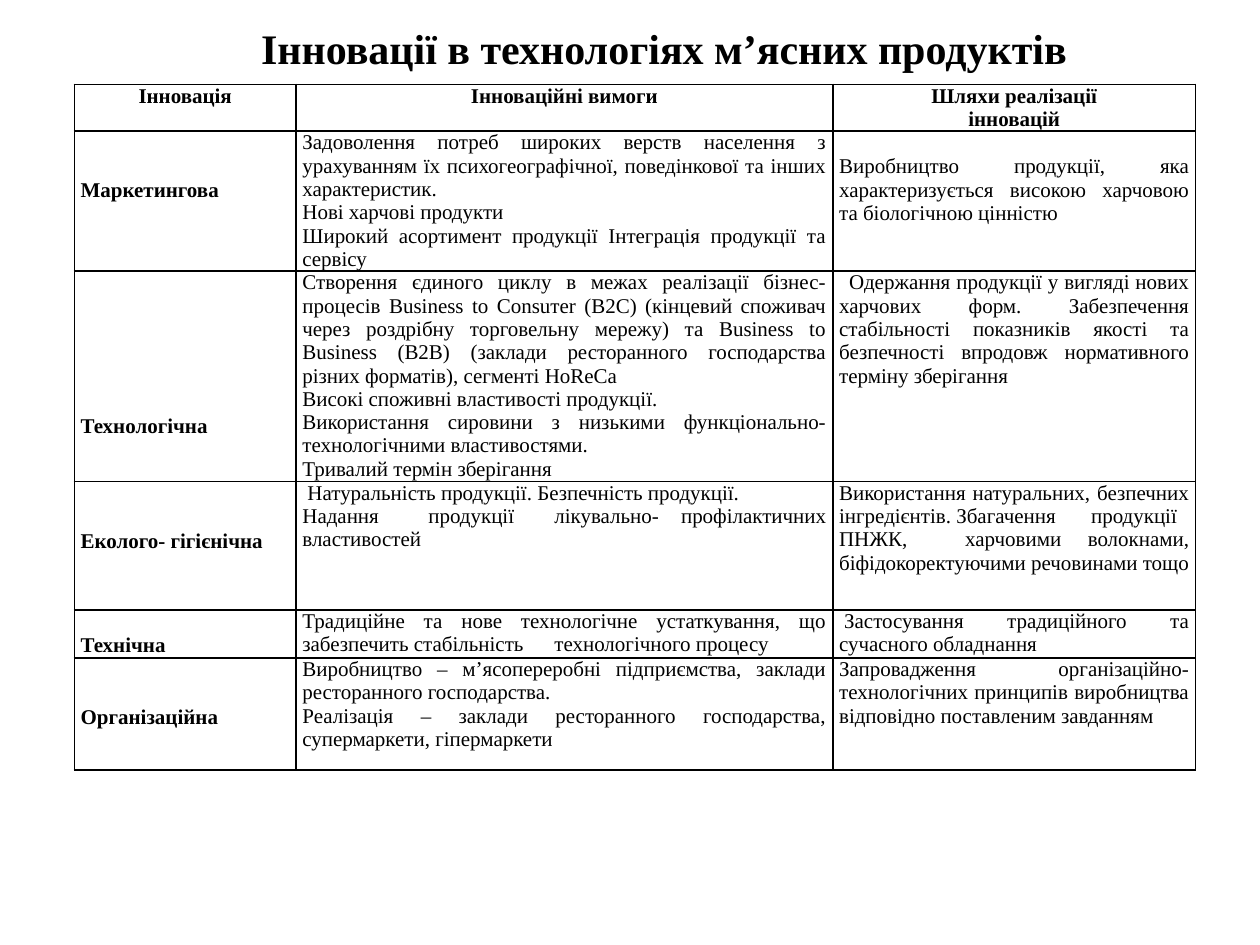
from dataclasses import dataclass

from lxml.etree import SubElement
from pptx import Presentation
from pptx.dml.color import RGBColor
from pptx.enum.text import MSO_ANCHOR, MSO_AUTO_SIZE, PP_ALIGN
from pptx.oxml.ns import qn
from pptx.util import Inches, Pt


@dataclass(frozen=True)
class Theme:
    font: str = "Times New Roman"
    ink: str = "000000"
    paper: str = "FFFFFF"
    head: int = 24
    body: int = 12
    rule: int = 1
    line: float = 0.19  # height of one body line, inches


@dataclass(frozen=True)
class Entry:
    """Cell text, lowered by whole lines, with an optional first-line indent."""
    paras: tuple
    drop: int = 0
    indent: float = 0


HEADS = (
    Entry(("Інновація",)),
    Entry(("Інноваційні вимоги",)),
    Entry(("Шляхи реалізації", "інновацій")),
)
ROWS = (
    (
        Entry(("Маркетингова",), drop=2),
        Entry((
            "Задоволення потреб широких верств населення з урахуванням їх "
            "психогеографічної, поведінкової та інших характеристик.",
            "Нові харчові продукти",
            "Широкий асортимент продукції Інтеграція продукції та сервісу",
        )),
        Entry((
            "Виробництво продукції, яка характеризується високою харчовою "
            "та біологічною цінністю",
        ), drop=1),
    ),
    (
        Entry(("Технологічна",), drop=6),
        Entry((
            "Створення єдиного циклу в межах реалізації бізнес-процесів "
            "Business to Consuтer (В2С) (кінцевий споживач через роздрібну "
            "торговельну мережу) та Business to Business (В2В) (заклади "
            "ресторанного господарства різних форматів), сегменті HoReCa",
            "Високі споживні властивості продукції.",
            "Використання сировини з низькими функціонально-технологічними "
            "властивостями.",
            "Тривалий термін зберігання",
        )),
        Entry((
            "Одержання продукції у вигляді нових харчових форм. Забезпечення "
            "стабільності показників якості та безпечності впродовж "
            "нормативного терміну зберігання",
        ), indent=0.08),
    ),
    (
        Entry(("Еколого- гігієнічна",), drop=2),
        Entry((
            "Натуральність продукції. Безпечність продукції.",
            "Надання\tпродукції\tлікувально- профілактичних властивостей",
        ), indent=0.04),
        Entry((
            "Використання натуральних, безпечних інгредієнтів. "
            "Збагачення\tпродукції",
            "ПНЖК,\tхарчовими волокнами, біфідокоректуючими речовинами тощо",
        )),
    ),
    (
        Entry(("Технічна",), drop=1),
        Entry((
            "Традиційне та нове технологічне устаткування, що забезпечить "
            "стабільність\tтехнологічного процесу",
        )),
        Entry((
            "Застосування традиційного та сучасного обладнання",
        ), indent=0.04),
    ),
    (
        Entry(("Організаційна",), drop=2),
        Entry((
            "Виробництво – м’ясопереробні підприємства, заклади "
            "ресторанного господарства.",
            "Реалізація – заклади ресторанного господарства, супермаркети, "
            "гіпермаркети",
        )),
        Entry((
            "Запровадження організаційно- технологічних принципів "
            "виробництва відповідно поставленим завданням",
        )),
    ),
)
WIDTHS = (1.76, 4.26, 2.88)
HEIGHTS = (0.37, 1.11, 1.67, 1.02, 0.38, 0.89)


class Page:
    def __init__(self, slide, theme):
        self.slide = slide
        self.theme = theme

    def text(self, para, words, size, bold, align):
        para.alignment = align
        run = para.add_run()
        run.text = words
        font = run.font
        font.name = self.theme.font
        font.size = Pt(size)
        font.bold = bold
        font.color.rgb = RGBColor.from_string(self.theme.ink)

    def title(self, words, left, top, width, height):
        box = self.slide.shapes.add_textbox(
            Inches(left), Inches(top), Inches(width), Inches(height))
        frame = box.text_frame
        frame.word_wrap = False
        frame.auto_size = MSO_AUTO_SIZE.SHAPE_TO_FIT_TEXT
        frame.vertical_anchor = MSO_ANCHOR.MIDDLE
        self.text(frame.paragraphs[0], words, self.theme.head, True,
                  PP_ALIGN.CENTER)

    def border(self, cell):
        props = cell._tc.get_or_add_tcPr()
        for side in ("lnL", "lnR", "lnT", "lnB"):
            line = SubElement(props, qn(f"a:{side}"),
                              w=str(Pt(self.theme.rule)))
            fill = SubElement(line, qn("a:solidFill"))
            SubElement(fill, qn("a:srgbClr"), val=self.theme.ink)

    def cell(self, cell, entry, bold, align):
        self.border(cell)
        cell.fill.solid()
        cell.fill.fore_color.rgb = RGBColor.from_string(self.theme.paper)
        cell.margin_left = cell.margin_right = Inches(0.05)
        cell.margin_top = Inches(entry.drop * self.theme.line)
        cell.margin_bottom = 0
        frame = cell.text_frame
        for i, words in enumerate(entry.paras):
            para = frame.add_paragraph() if i else frame.paragraphs[0]
            self.text(para, words, self.theme.body, bold, align)
        if entry.indent:
            props = frame.paragraphs[0]._p.get_or_add_pPr()
            props.set("indent", str(Inches(entry.indent)))

    def table(self, rows, left, top, widths, heights):
        table = self.slide.shapes.add_table(
            len(heights), len(widths), Inches(left), Inches(top),
            Inches(sum(widths)), Inches(sum(heights))).table
        for col, width in zip(table.columns, widths):
            col.width = Inches(width)
        for row, height in zip(table.rows, heights):
            row.height = Inches(height)
        for r, row in enumerate(rows):
            align = PP_ALIGN.JUSTIFY if r else PP_ALIGN.CENTER
            for c, entry in enumerate(row):
                self.cell(table.cell(r, c), entry, r == 0 or c == 0, align)


def main():
    deck = Presentation()
    deck.slide_width = Inches(10)
    deck.slide_height = Inches(7.5)
    page = Page(deck.slides.add_slide(deck.slide_layouts[6]), Theme())
    page.table((HEADS, *ROWS), 0.59, 0.67, WIDTHS, HEIGHTS)
    page.title("Інновації в технологіях м’ясних продуктів",
               1.94, 0.13, 6.66, 0.5)
    deck.save("out.pptx")


if __name__ == "__main__":
    main()
